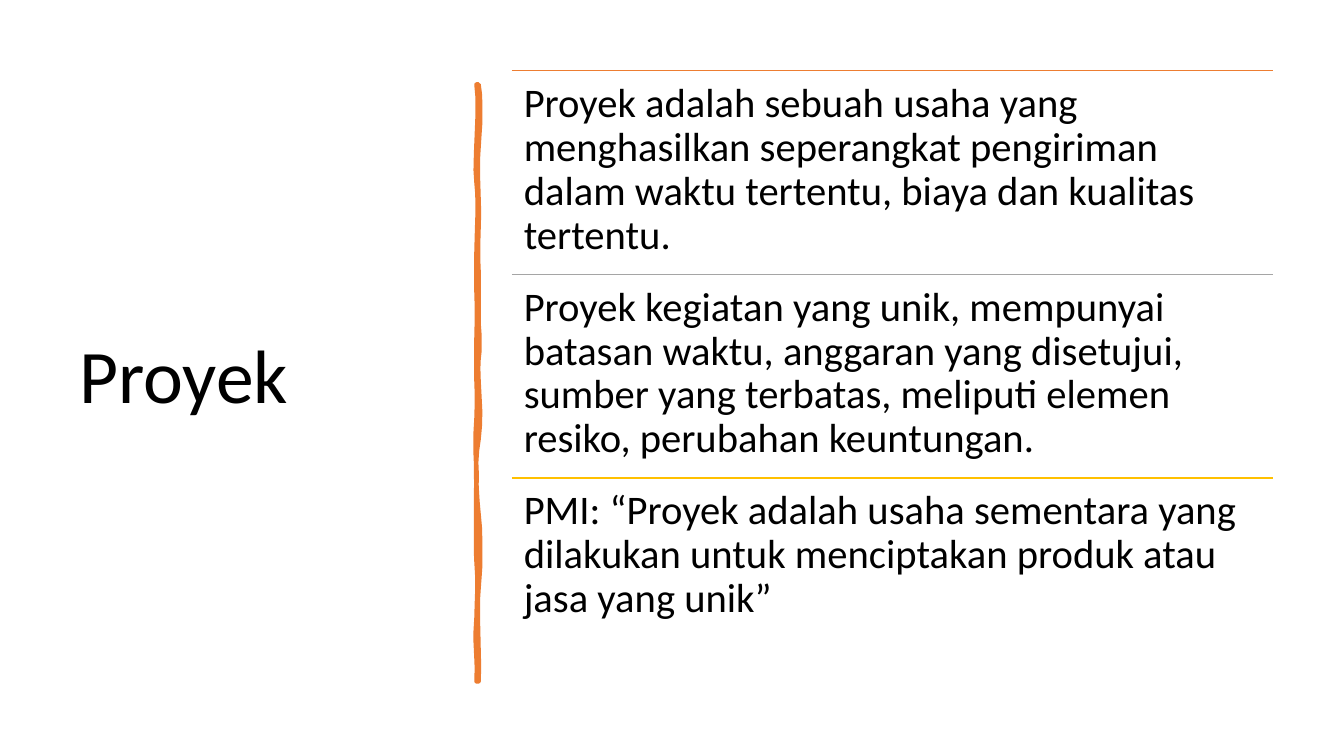
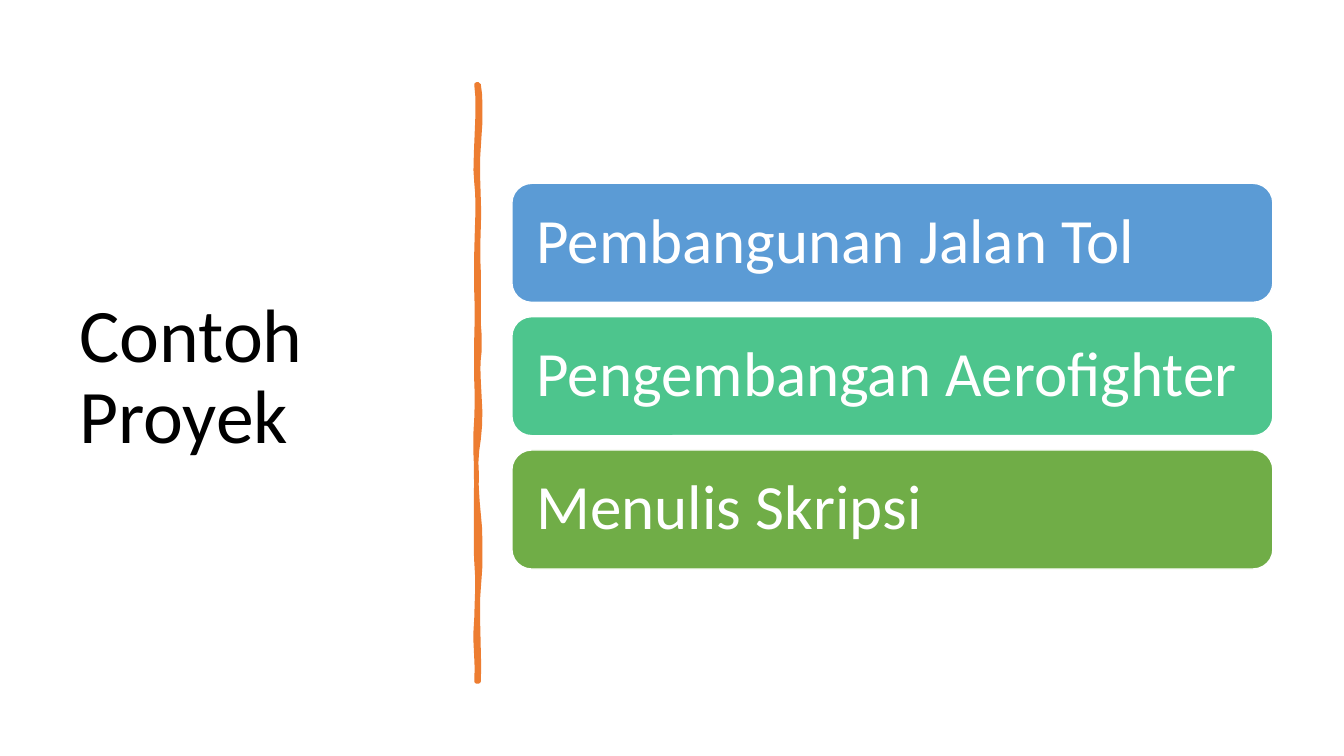
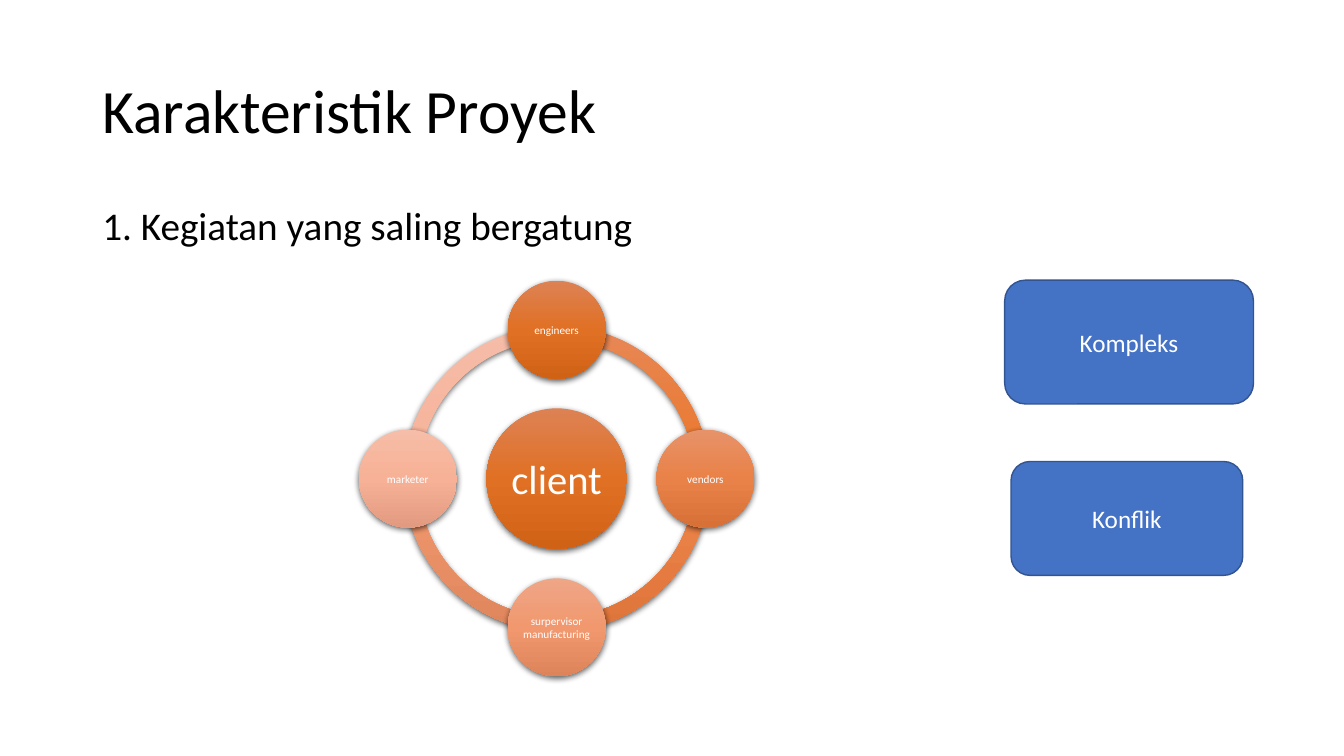
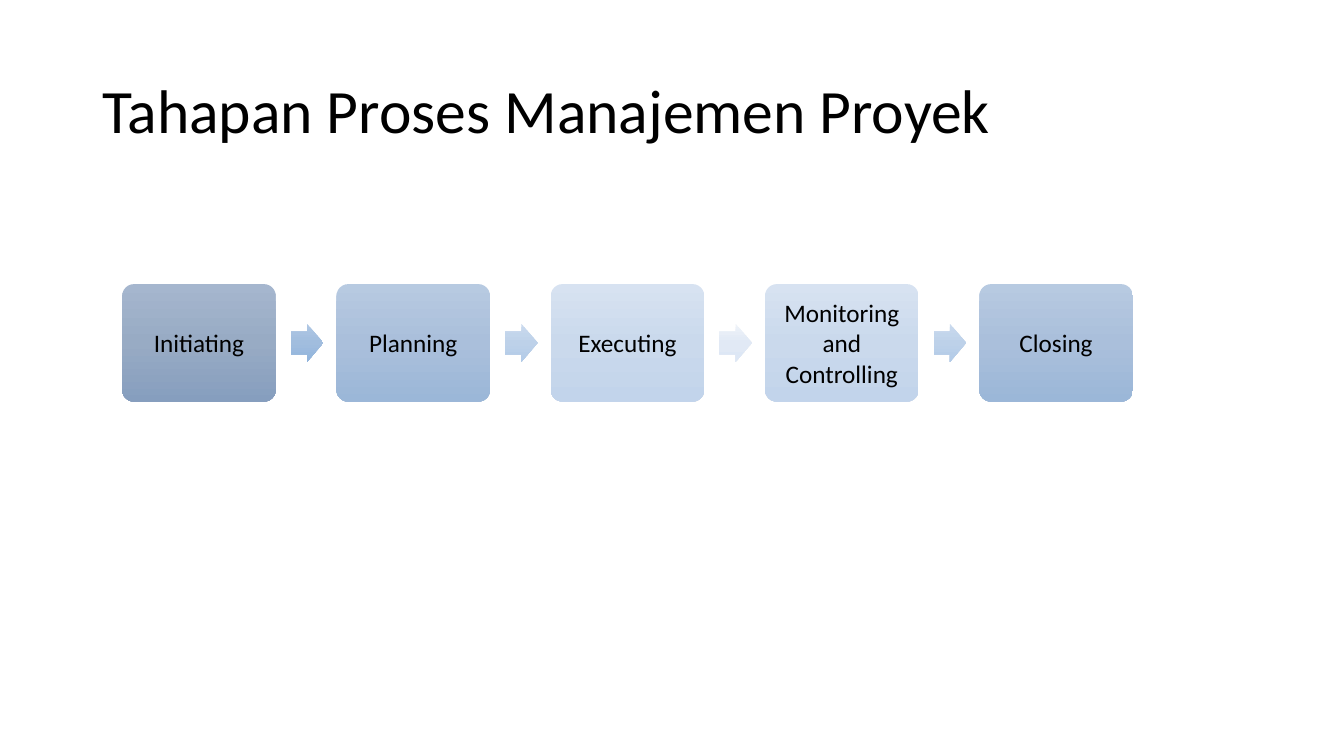
"""Build four slides that introduce projects and project management."""
from dataclasses import dataclass
from typing import Any

from pptx import Presentation
from pptx import util as u
from pptx.dml.color import RGBColor
from pptx.enum import shapes, text
from pptx.oxml import parse_xml
from pptx.oxml.ns import nsdecls, qn
from pptx.oxml.xmlchemy import OxmlElement

Gradient = tuple[RGBColor, RGBColor, RGBColor]
Fill = RGBColor | Gradient | None
Box = tuple[float, float, float, float]


def gradient(*stops: str) -> Gradient:
    """Turn three hex values into gradient colours."""
    return tuple(RGBColor.from_string(c) for c in stops)


FONT = "Calibri"
BLACK = RGBColor(0x00, 0x00, 0x00)
WHITE = RGBColor(0xFF, 0xFF, 0xFF)
ORANGE = RGBColor(0xED, 0x7D, 0x31)
GRAY = RGBColor(0xA5, 0xA5, 0xA5)
GOLD = RGBColor(0xFF, 0xC0, 0x00)
SKY = RGBColor(0x5B, 0x9B, 0xD5)
MINT = RGBColor(0x4D, 0xC5, 0x8D)
GREEN = RGBColor(0x70, 0xAD, 0x47)
BLUE = RGBColor(0x44, 0x72, 0xC4)
NAVY = RGBColor(0x32, 0x54, 0x91)

RUST = gradient("DD8254", "E07024", "D06216")
STEEL = gradient("A5B6CE", "98ABC4", "869EBE")
AZURE = gradient("B7CAE1", "AABFDB", "9BB7D8")
ICE = gradient("D7E2F1", "CAD9EC", "C2D4EB")
ARROW_DEEP = gradient("AFC7E4", "A1BDDE", "90B4DD")
ARROW_MID = gradient("CADAEE", "BDD1E9", "B2CBE8")
ARROW_PALE = gradient("EEF3F9", "E1E9F5", "DDE7F5")

SIDE_TITLE: Box = (1.75, 1.78, 9.5, 15.52)
TOP_TITLE: Box = (2.33, 1.01, 29.21, 3.68)
PANEL_LEFT, PANEL_WIDTH = 12.9, 19.18

STROKE_START = (1206, 213)
STROKE_CURVES = (
    (1212, 259, 1212, 302, 1206, 371), (1201, 439, 1209, 495, 1206, 574),
    (1204, 653, 1206, 665, 1206, 747), (1204, 826, 1212, 869, 1206, 904),
    (1201, 940, 1217, 1052, 1206, 1107), (1196, 1161, 1199, 1229, 1206, 1295),
    (1212, 1361, 1212, 1433, 1206, 1483), (1201, 1532, 1209, 1651, 1206, 1717),
    (1204, 1717, 1201, 1717, 1201, 1717), (1204, 1641, 1196, 1636, 1201, 1557),
    (1204, 1481, 1204, 1448, 1201, 1415), (1199, 1382, 1199, 1257, 1201, 1212),
    (1201, 1166, 1196, 1130, 1201, 1054), (1204, 980, 1199, 947, 1201, 851),
    (1204, 757, 1199, 714, 1201, 635), (1204, 554, 1206, 508, 1201, 460),
    (1194, 414, 1212, 264, 1201, 213),
)


@dataclass(frozen=True)
class TextStyle:
    """Size, colour and placement of a text."""
    size: float
    color: RGBColor = BLACK
    align: Any = text.PP_ALIGN.LEFT
    anchor: Any = text.MSO_ANCHOR.MIDDLE
    spacing: float = 1.0
    inset: float | None = None


@dataclass(frozen=True)
class Item:
    """A label with its fill colour."""
    label: str
    fill: Fill


@dataclass(frozen=True)
class Satellite:
    """A circle on the ring and its direction from the centre."""
    label: str
    dx: int
    dy: int
    fill: Gradient


@dataclass(frozen=True)
class Arc:
    """A quarter of the ring; angles are in units of 100000."""
    start: float
    end: float
    fill: Gradient


CENTER, TOP = text.PP_ALIGN.CENTER, text.MSO_ANCHOR.TOP
SIDE_STYLE = TextStyle(54, spacing=0.9)
TOP_STYLE = TextStyle(44, spacing=0.9)
BODY_STYLE = TextStyle(28, anchor=TOP, spacing=0.9)
ROW_STYLE = TextStyle(29, anchor=TOP, spacing=0.9, inset=0.3)
BAR_STYLE = TextStyle(45, WHITE, spacing=0.9, inset=0.48)
HUB_STYLE = TextStyle(29, WHITE, CENTER, inset=0.1)
SATELLITE_STYLE = TextStyle(8, WHITE, CENTER, inset=0.02)
BUTTON_STYLE = TextStyle(18, WHITE, CENTER)
STEP_STYLE = TextStyle(18, align=CENTER, inset=0.18)

DEFINITIONS = (
    Item("Proyek adalah sebuah usaha yang menghasilkan seperangkat pengiriman "
         "dalam waktu tertentu, biaya dan kualitas tertentu.", ORANGE),
    Item("Proyek kegiatan yang unik, mempunyai batasan waktu, anggaran yang "
         "disetujui, sumber yang terbatas, meliputi elemen resiko, perubahan "
         "keuntungan.", GRAY),
    Item("PMI: “Proyek adalah usaha sementara yang dilakukan untuk menciptakan "
         "produk atau jasa yang unik”", GOLD),
)
EXAMPLES = (
    Item("Pembangunan Jalan Tol", SKY),
    Item("Pengembangan Aerofighter", MINT),
    Item("Menulis Skripsi", GREEN),
)
ARCS = (
    Arc(108, 162, gradient("F5BCA8", "F7B096", "E29A7F")),
    Arc(54, 108, gradient("F1A788", "F49A70", "E0865C")),
    Arc(0, 54, gradient("EC966B", "F0864B", "DE753A")),
    Arc(162, 0, gradient("E78756", "EB7626", "DB6718")),
)
SATELLITES = (
    Satellite("engineers", 0, -1, RUST),
    Satellite("vendors", 1, 0, gradient("E79269", "E98248", "D87138")),
    Satellite("surpervisor manufacturing", 0, 1, gradient("EFA686", "F1986F", "DE845B")),
    Satellite("marketer", -1, 0, gradient("F6BDA8", "F7B196", "E29A80")),
)
BUTTONS: tuple[tuple[str, Box], ...] = (
    ("Kompleks", (25.32, 7.06, 6.27, 3.12)),
    ("Konflik", (25.48, 11.63, 5.84, 2.87)),
)
STEPS = (
    Item("Initiating", STEEL),
    Item("Planning", AZURE),
    Item("Executing", ICE),
    Item("Monitoring and Controlling", ICE),
    Item("Closing", AZURE),
)
STEP_ARROWS = (ARROW_DEEP, ARROW_MID, ARROW_PALE, ARROW_MID)


def cm(box: Box) -> list[u.Cm]:
    """Convert a box to lengths."""
    return [u.Cm(v) for v in box]


def apply(target: Any, values: dict[str, Any]) -> None:
    """Set each named attribute on the target."""
    for name, value in values.items():
        setattr(target, name, value)


def write(sp: Any, words: str, style: TextStyle) -> None:
    """Write one formatted paragraph into a shape."""
    tf = sp.text_frame
    apply(tf, {"word_wrap": True, "vertical_anchor": style.anchor})
    if style.inset is not None:
        sides = ("left", "top", "right", "bottom")
        apply(tf, {f"margin_{side}": u.Cm(style.inset) for side in sides})
    p = tf.paragraphs[0]
    apply(p, {"alignment": style.align, "line_spacing": style.spacing})
    r = p.add_run()
    r.text = words
    apply(r.font, {"name": FONT, "size": u.Pt(style.size)})
    r.font.color.rgb = style.color


def add_text(s: Any, box: Box, words: str, style: TextStyle) -> None:
    """Add a text box."""
    write(s.shapes.add_textbox(*cm(box)), words, style)


def paint(sp: Any, fill: Fill, line: RGBColor | None = None, width: float = 1) -> None:
    """Set fill and outline and switch off the shadow."""
    sp.shadow.inherit = False
    if isinstance(fill, RGBColor):
        sp.fill.solid()
        sp.fill.fore_color.rgb = fill
    else:
        stops = "".join(f'<a:gs pos="{50000 * i}"><a:srgbClr val="{c}"/></a:gs>'
                        for i, c in enumerate(fill))
        geometry = sp.element.spPr.find(qn("a:prstGeom"))
        geometry.addnext(parse_xml(
            f'<a:gradFill {nsdecls("a")} rotWithShape="1"><a:gsLst>{stops}</a:gsLst>'
            '<a:lin ang="5400000" scaled="0"/></a:gradFill>'))
    if line is None:
        sp.line.fill.background()
    else:
        sp.line.color.rgb = line
        sp.line.width = u.Pt(width)


def add_shape(s: Any, kind: Any, box: Box, fill: Fill, line: RGBColor | None = None,
              adjustments: tuple[float, ...] = ()) -> Any:
    """Add a painted preset shape."""
    sp = s.shapes.add_shape(kind, *cm(box))
    for i, value in enumerate(adjustments):
        sp.adjustments[i] = value
    paint(sp, fill, line)
    return sp


def cast_shadow(sp: Any) -> None:
    """Give a shape a soft shadow below it."""
    sp.element.spPr.find(qn("a:effectLst")).append(parse_xml(
        f'<a:outerShdw {nsdecls("a")} blurRad="57150" dist="19050" dir="5400000" '
        'algn="ctr" rotWithShape="0"><a:srgbClr val="000000">'
        '<a:alpha val="63000"/></a:srgbClr></a:outerShdw>'))


def add_rule(s: Any, top: float, color: RGBColor) -> None:
    """Add a horizontal line across the panel."""
    ends = cm((PANEL_LEFT, top, PANEL_LEFT + PANEL_WIDTH, top))
    rule = s.shapes.add_connector(shapes.MSO_CONNECTOR.STRAIGHT, *ends)
    rule.line.color.rgb = color
    rule.line.width = u.Pt(1)
    rule.element.spPr.append(OxmlElement("a:effectLst"))


def stroke_points(steps: int = 6) -> list[tuple[float, float]]:
    """Sample the curves of the hand-drawn stroke."""
    points = []
    x0, y0 = STROKE_START
    for x1, y1, x2, y2, x3, y3 in STROKE_CURVES:
        for i in range(1, steps + 1):
            t = i / steps
            a, b, c, d = (1 - t) ** 3, 3 * t * (1 - t) ** 2, 3 * t * t * (1 - t), t ** 3
            points.append((a * x0 + b * x1 + c * x2 + d * x3,
                           a * y0 + b * y1 + c * y2 + d * y3))
        x0, y0 = x3, y3
    return points


def add_side_title(s: Any, title: str) -> None:
    """Add the title at the left and the stroke beside it."""
    add_text(s, SIDE_TITLE, title, SIDE_STYLE)
    builder = s.shapes.build_freeform(*STROKE_START, scale=float(u.Cm(0.01)))
    builder.add_line_segments(stroke_points(), close=True)
    sp = builder.convert_to_shape()
    paint(sp, ORANGE, ORANGE, 3.25)
    sp.element.spPr.find(qn("a:ln")).append(OxmlElement("a:round"))


def definition_slide(s: Any) -> None:
    """Draw the definitions of a project."""
    add_side_title(s, "Proyek")
    top, pitch = 1.78, 5.13
    for i, item in enumerate(DEFINITIONS):
        y = top + i * pitch
        add_rule(s, y, item.fill)
        add_text(s, (PANEL_LEFT, y, PANEL_WIDTH, pitch), item.label, ROW_STYLE)


def example_slide(s: Any) -> None:
    """Draw the project examples."""
    add_side_title(s, "Contoh Proyek")
    top, pitch, height = 4.62, 3.36, 3.0
    for i, item in enumerate(EXAMPLES):
        box = (PANEL_LEFT, top + i * pitch, PANEL_WIDTH, height)
        sp = add_shape(s, shapes.MSO_SHAPE.ROUNDED_RECTANGLE, box, item.fill, WHITE)
        write(sp, item.label, BAR_STYLE)


def characteristic_slide(s: Any) -> None:
    """Draw the ring of people around the client."""
    add_text(s, TOP_TITLE, "Karakteristik Proyek", TOP_STYLE)
    add_text(s, (2.33, 5.08, 29.21, 12.09), "1. Kegiatan yang saling bergatung", BODY_STYLE)
    cx, cy, orbit = 14.03, 12.06, 3.75

    def centered(x: float, y: float, size: float) -> Box:
        return x - size / 2, y - size / 2, size, size

    def add_circle(box: Box, fill: Gradient, label: str, style: TextStyle) -> None:
        sp = add_shape(s, shapes.MSO_SHAPE.OVAL, box, fill)
        cast_shadow(sp)
        write(sp, label, style)

    for arc in ARCS:
        cast_shadow(add_shape(s, shapes.MSO_SHAPE.BLOCK_ARC, centered(cx, cy, 7.7), arc.fill,
                              adjustments=(arc.start, arc.end, 0.046)))
    add_circle(centered(cx, cy, 3.54), RUST, "client", HUB_STYLE)
    for sat in SATELLITES:
        box = centered(cx + sat.dx * orbit, cy + sat.dy * orbit, 2.47)
        add_circle(box, sat.fill, sat.label, SATELLITE_STYLE)
    for label, box in BUTTONS:
        sp = add_shape(s, shapes.MSO_SHAPE.ROUNDED_RECTANGLE, box, BLUE, NAVY)
        write(sp, label, BUTTON_STYLE)


def process_slide(s: Any) -> None:
    """Draw the chain of process steps."""
    add_text(s, TOP_TITLE, "Tahapan Proses Manajemen Proyek", TOP_STYLE)
    left, pitch = 3.08, 5.4
    for i, step in enumerate(STEPS):
        x = left + i * pitch
        sp = add_shape(s, shapes.MSO_SHAPE.ROUNDED_RECTANGLE, (x, 7.16, 3.87, 2.96),
                       step.fill, adjustments=(0.1,))
        write(sp, step.label, STEP_STYLE)
        if i < len(STEP_ARROWS):
            add_shape(s, shapes.MSO_SHAPE.RIGHT_ARROW, (x + 4.25, 8.16, 0.82, 0.96),
                      STEP_ARROWS[i], adjustments=(0.6, 0.5))


def main() -> None:
    """Build and save the presentation."""
    prs = Presentation()
    apply(prs, {"slide_width": u.Cm(33.87), "slide_height": u.Cm(19.05)})
    for draw in (definition_slide, example_slide, characteristic_slide, process_slide):
        draw(prs.slides.add_slide(prs.slide_layouts[6]))
    prs.save("out.pptx")


if __name__ == "__main__":
    main()
